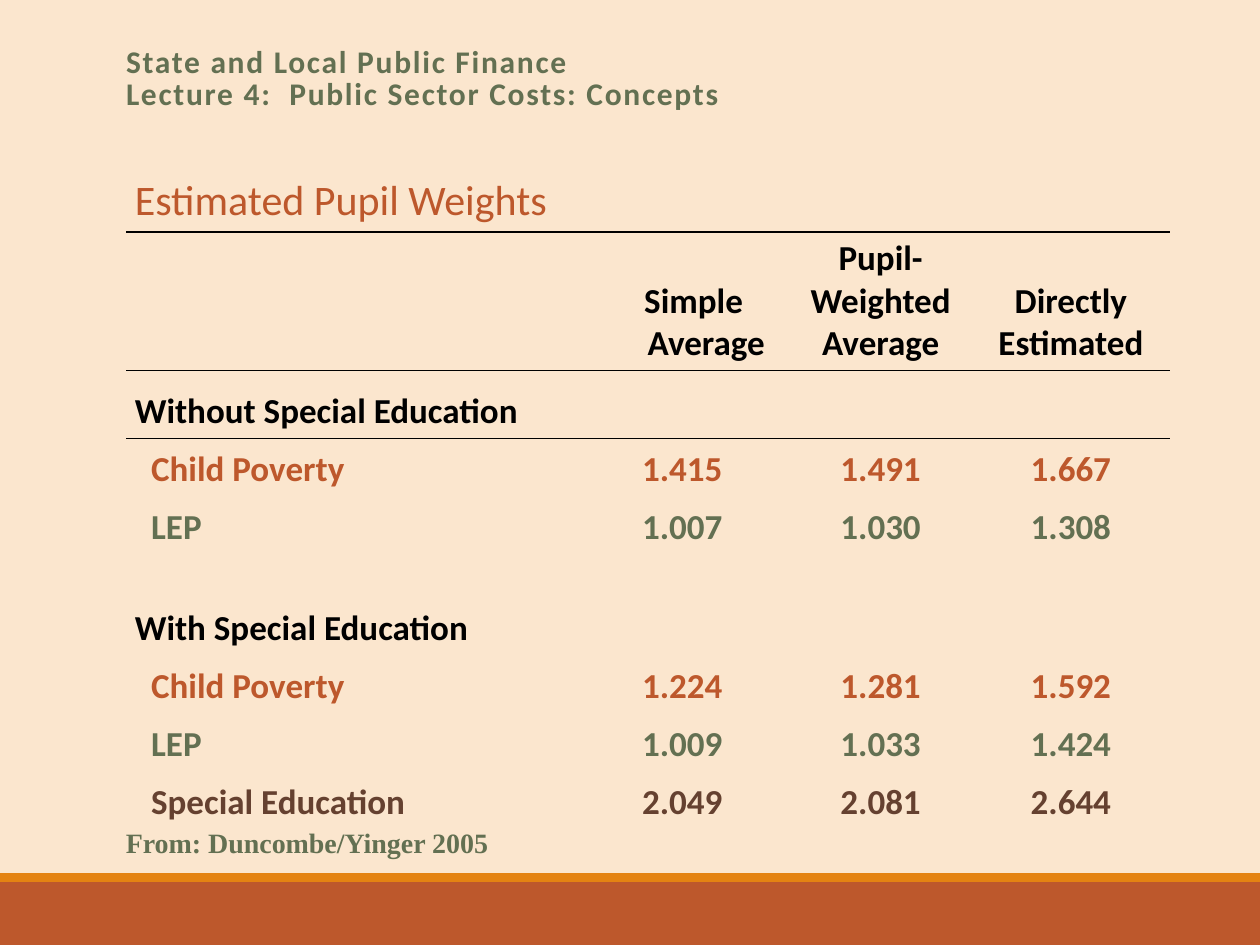
from copy import deepcopy
from dataclasses import dataclass

from lxml.etree import SubElement
from pptx import Presentation
from pptx.dml.color import RGBColor
from pptx.enum.shapes import MSO_SHAPE as Shape
from pptx.enum.text import MSO_ANCHOR as Anchor, MSO_AUTO_SIZE as Fit, PP_ALIGN as Align
from pptx.oxml.ns import qn
from pptx.util import Inches, Pt


@dataclass(frozen=True)
class Theme:
    back: str = "FBE6CE"
    rust: str = "BD582C"
    gold: str = "E48312"
    sage: str = "637052"
    brown: str = "654130"
    ink: str = "000000"
    sans: str = "Calibri"
    serif: str = "Times New Roman"
    head: int = 18
    name: int = 24
    body: int = 20
    note: int = 16


T = Theme()
PLAIN = "{2D5ABB26-0587-4C30-8999-92F81FD0307C}"
COLS = (3.56, 1.71, 1.44, 1.58)
ROWS = (0.51, 1.09, 0.54, 0.46, 0.46, 0.8, 0.46, 0.46, 0.46)
HEADS = ("Simple Average", "Pupil-\nWeighted\nAverage", "Directly\nEstimated")
GROUPS = {2: "Without Special Education", 5: "With Special Education"}
DATA = {
    3: (T.rust, "Child Poverty", "1.415", "1.491", "1.667"),
    4: (T.sage, "LEP", "1.007", "1.030", "1.308"),
    6: (T.rust, "Child Poverty", "1.224", "1.281", "1.592"),
    7: (T.sage, "LEP", "1.009", "1.033", "1.424"),
    8: (T.brown, "Special Education", "2.049", "2.081", "2.644"),
}


def write(frame, text, size=T.body, color=T.ink, font=T.sans, bold=True,
          align=Align.LEFT, left=0, first=0, lead=None, track=0):
    """Fill a frame: newline starts a paragraph, vertical tab breaks a line."""
    frame.word_wrap = True
    for i, line in enumerate(text.split("\n")):
        para = frame.add_paragraph() if i else frame.paragraphs[0]
        para.text = line
        para.alignment = align
        if lead:
            para.line_spacing = lead
        props = para._p.get_or_add_pPr()
        props.set("marL", str(Inches(left)))
        props.set("indent", str(Inches(first)))
        for run in para.runs:
            face = run.font
            face.name, face.size, face.bold = font, Pt(size), bold
            face.color.rgb = RGBColor.from_string(color)
            if track:
                run._r.get_or_add_rPr().set("spc", str(track * 100))
        for gap in para._p.findall(qn("a:br")):
            gap.append(deepcopy(para.runs[0]._r.rPr))


def add_bar(slide, top, height, color):
    bar = slide.shapes.add_shape(Shape.RECTANGLE, 0, Inches(top), Inches(10), Inches(height))
    bar.shadow.inherit = False
    bar.fill.solid()
    bar.fill.fore_color.rgb = RGBColor.from_string(color)
    bar.line.fill.background()


def rule(cell, *sides):
    """Draw a thin line on the given sides, named lnT and lnB."""
    for side in sides:
        line = SubElement(cell._tc.get_or_add_tcPr(), qn("a:" + side), w=str(Pt(1)))
        fill = SubElement(line, qn("a:solidFill"))
        SubElement(fill, qn("a:srgbClr"), val=T.ink)


def add_title(slide):
    title = slide.shapes.title
    title.left, title.top = Inches(0.9), Inches(0.33)
    title.width, title.height = Inches(8.25), Inches(0.65)
    frame = title.text_frame
    frame.auto_size = Fit.NONE
    frame.vertical_anchor = Anchor.TOP
    write(frame, "State and Local Public Finance\vLecture 4:  Public Sector Costs: Concepts",
          size=T.head, color=T.sage, lead=0.85, track=1)


def add_grid(slide):
    """Add the bare table, with its sizes, rules and margins."""
    frame = slide.shapes.add_table(len(ROWS), len(COLS), Inches(1), Inches(1.33),
                                   Inches(sum(COLS)), Inches(sum(ROWS)))
    grid = frame.table
    grid.first_row = grid.horz_banding = False
    grid._tbl.tblPr.find(qn("a:tableStyleId")).text = PLAIN
    for col, width in zip(grid.columns, COLS):
        col.width = Inches(width)
    sides = {0: ("lnB",), 1: ("lnT", "lnB"), 2: ("lnT",)}
    for r, (row, height) in enumerate(zip(grid.rows, ROWS)):
        row.height = Inches(height)
        for cell in row.cells:
            rule(cell, *sides.get(r, ()))
            cell.fill.background()
            cell.vertical_anchor = Anchor.BOTTOM
            cell.margin_left = cell.margin_right = Inches(0.07)
            cell.margin_top = cell.margin_bottom = Inches(0.04)
    return grid


def add_weights(slide):
    grid = add_grid(slide)
    grid.cell(0, 0).merge(grid.cell(0, 3))
    write(grid.cell(0, 0).text_frame, "Estimated Pupil Weights",
          size=T.name, color=T.rust, bold=False)
    for c, head in enumerate(HEADS, 1):
        left, first = (0.38, -0.2) if c == 1 else (0, 0)
        write(grid.cell(1, c).text_frame, head, align=Align.CENTER, left=left, first=first)
    for r, group in GROUPS.items():
        grid.cell(r, 0).merge(grid.cell(r, 1))
        write(grid.cell(r, 0).text_frame, group)
    for r, (color, label, *values) in DATA.items():
        write(grid.cell(r, 0).text_frame, label, color=color, left=0.13)
        for c, value in enumerate(values, 1):
            write(grid.cell(r, c).text_frame, value, color=color, align=Align.CENTER)


def add_note(slide):
    box = slide.shapes.add_textbox(Inches(0.9), Inches(6.5), Inches(5.06), Inches(0.5))
    write(box.text_frame, "From: Duncombe/Yinger 2005",
          size=T.note, color=T.sage, font=T.serif)


def main():
    deck = Presentation()
    deck.slide_width, deck.slide_height = Inches(10), Inches(7.5)
    slide = deck.slides.add_slide(deck.slide_layouts[5])
    slide.background.fill.solid()
    slide.background.fill.fore_color.rgb = RGBColor.from_string(T.back)
    add_bar(slide, 7, 0.5, T.rust)
    add_bar(slide, 6.93, 0.07, T.gold)
    add_weights(slide)
    add_note(slide)
    add_title(slide)
    deck.save("out.pptx")


if __name__ == "__main__":
    main()
